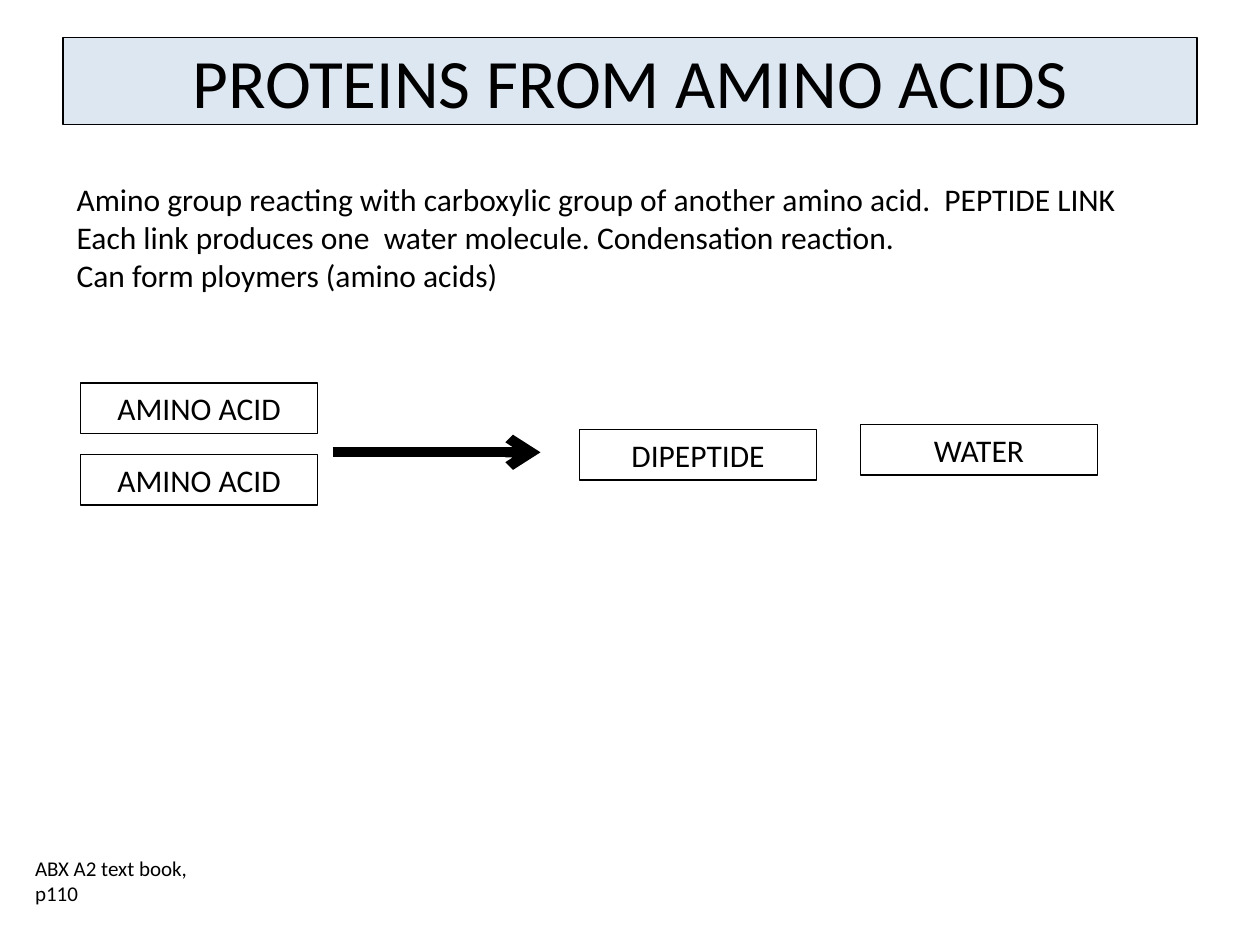
from dataclasses import dataclass

from lxml import etree
from pptx import Presentation
from pptx.dml.color import RGBColor
from pptx.enum import shapes, text
from pptx.oxml import ns
from pptx.util import Inches, Pt


@dataclass(frozen=True)
class Theme:
    font: str = "Calibri"
    ink: RGBColor = RGBColor(0, 0, 0)
    accent: RGBColor = RGBColor(0x4F, 0x81, 0xBD)
    accent_alpha: int = 19
    title_size: float = 39.6
    body_size: float = 18
    source_size: float = 12
    border: float = 0.75
    arrow: float = 5.75


THEME = Theme()
BOX_W, BOX_H = 1.88, 0.4


def place(sp, left, top, width, height):
    sp.left, sp.top = Inches(left), Inches(top)
    sp.width, sp.height = Inches(width), Inches(height)


def set_text(sp, lines, size, align=text.PP_ALIGN.LEFT, anchor=text.MSO_ANCHOR.TOP):
    tf = sp.text_frame
    tf.text = "\n".join(lines)
    tf.word_wrap = True
    tf.auto_size = text.MSO_AUTO_SIZE.NONE
    tf.vertical_anchor = anchor
    for p in tf.paragraphs:
        p.alignment = align
        for r in p.runs:
            r.font.name = THEME.font
            r.font.size = Pt(size)
            r.font.color.rgb = THEME.ink


def set_line(sp, width):
    sp.line.color.rgb = THEME.ink
    sp.line.width = Pt(width)


def add_title(s, title):
    sp = s.shapes.title
    place(sp, 0.5, 0.3, 9, 0.69)
    sp.fill.solid()
    sp.fill.fore_color.rgb = THEME.accent
    color = sp.fill._xPr.find(".//" + ns.qn("a:srgbClr"))
    etree.SubElement(color, ns.qn("a:alpha"), val=str(THEME.accent_alpha * 1000))
    set_line(sp, THEME.border)
    set_text(sp, [title], THEME.title_size, text.PP_ALIGN.CENTER, text.MSO_ANCHOR.MIDDLE)


def add_text(s, lines, size, left, top, width, height):
    sp = s.shapes.add_textbox(*map(Inches, (left, top, width, height)))
    set_text(sp, lines, size)


def add_molecule(s, name, left, top):
    sp = s.shapes.add_shape(
        shapes.MSO_SHAPE.RECTANGLE, *map(Inches, (left, top, BOX_W, BOX_H))
    )
    sp.shadow.inherit = False
    sp.fill.background()
    set_line(sp, THEME.border)
    set_text(sp, [name], THEME.body_size, text.PP_ALIGN.CENTER)


def add_reaction_arrow(s, start, end, y):
    line = s.shapes.add_connector(
        shapes.MSO_CONNECTOR.STRAIGHT, *map(Inches, (start, y, end, y))
    )
    set_line(line, THEME.arrow)
    etree.SubElement(line.line._get_or_add_ln(), ns.qn("a:tailEnd"), type="arrow")
    etree.SubElement(line._element.spPr, ns.qn("a:effectLst"))


def main():
    prs = Presentation()
    prs.slide_width, prs.slide_height = Inches(10), Inches(7.5)
    s = prs.slides.add_slide(prs.slide_layouts[5])

    add_title(s, "PROTEINS FROM AMINO ACIDS")
    add_text(s, ["ABX A2 text book, p110"], THEME.source_size, 0.18, 6.74, 1.59, 0.5)
    add_text(
        s,
        [
            "Amino group reacting with carboxylic group of another amino acid.  PEPTIDE LINK",
            "Each link produces one  water molecule. Condensation reaction.",
            "Can form ploymers (amino acids)",
        ],
        THEME.body_size, 0.51, 1.38, 9.06, 1.01,
    )
    for name, left, top in (
        ("AMINO ACID", 0.64, 3.04),
        ("AMINO ACID", 0.64, 3.61),
        ("DIPEPTIDE", 4.6, 3.41),
        ("WATER", 6.83, 3.37),
    ):
        add_molecule(s, name, left, top)
    add_reaction_arrow(s, 2.64, 4.29, 3.59)

    prs.save("out.pptx")


if __name__ == "__main__":
    main()
